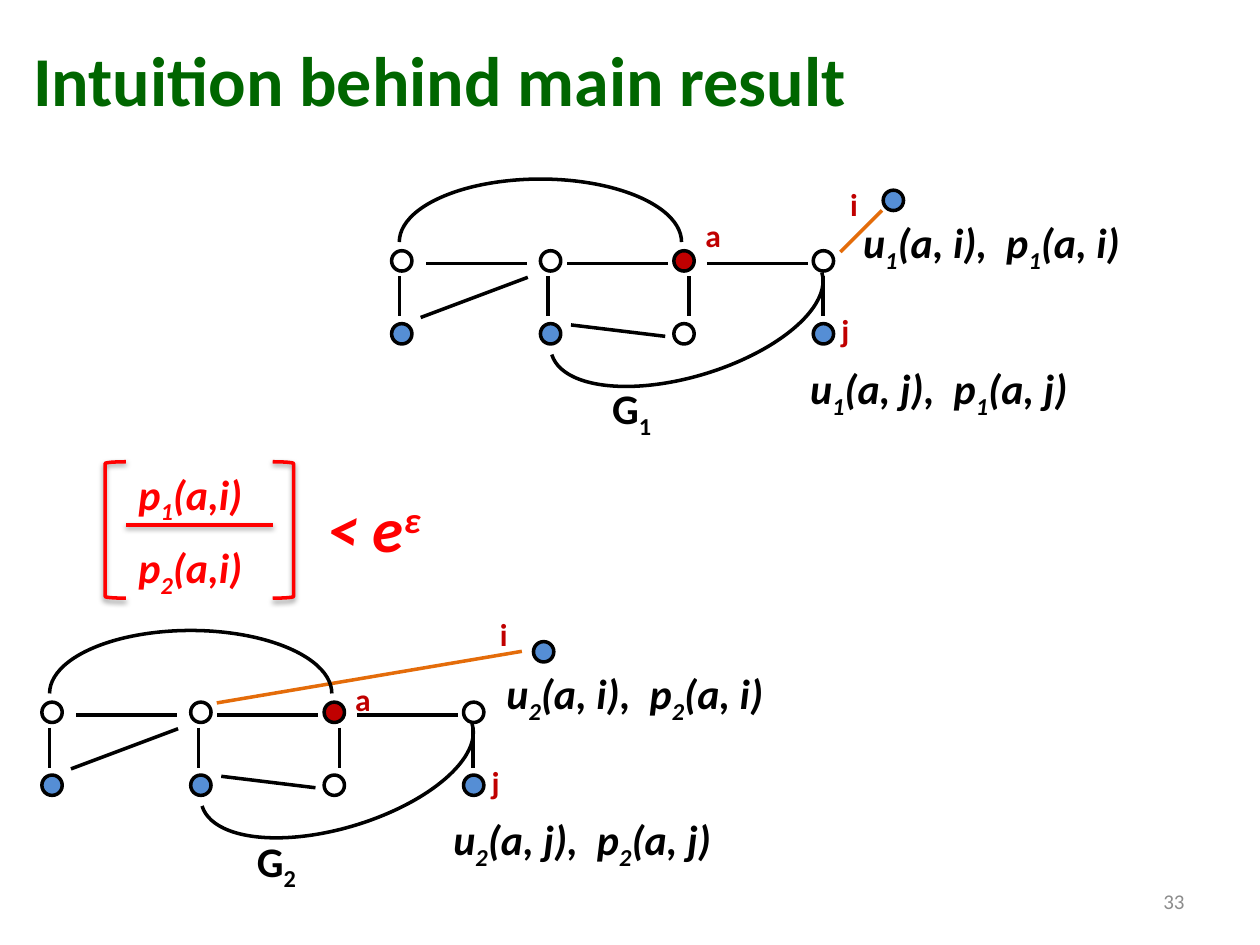
import lxml.etree
import pptx
import pptx.dml.color
import pptx.enum.shapes
import pptx.enum.text
import pptx.oxml.ns
import pptx.util
from dataclasses import dataclass

Cm, Pt = pptx.util.Cm, pptx.util.Pt
Kind = pptx.enum.shapes.MSO_SHAPE
Align = pptx.enum.text.PP_ALIGN
qn = pptx.oxml.ns.qn


@dataclass(frozen=True)
class Theme:
    font: str = "Calibri"
    green: str = "006600"
    black: str = "000000"
    grey: str = "8C8C8C"
    blue: str = "558ED5"
    dark: str = "C00000"
    red: str = "FF0000"
    orange: str = "E46C0A"
    title: int = 40
    big: int = 36
    body: int = 24
    label: int = 18
    small: int = 12
    stroke: int = 2


theme = Theme()

# Graph layout in cm, shared by both graphs
COLS = (8.1, 11.1, 13.79, 16.6)
ROWS = (5.26, 6.73)
DOT = 0.41
FILLS = ((None, None, theme.dark, None),
         (theme.blue, theme.blue, None, theme.blue))
EDGES = (
    [(x, 5.57, x, 6.38) for x in (8.05, 11.05, 13.89, 16.59)]
    + [(x, 5.31, x + 2.03, 5.31) for x in (8.59, 11.43, 14.25)]
    + [(8.48, 6.4, 10.64, 5.59), (11.51, 6.55, 13.41, 6.78)]
)
ARCS = ((8.05, 3.61, 0), (11, 5.05, 163.1))

# What differs between the graphs
GRAPHS = (
    {"num": 1, "shift": (0, 0), "edge": (16.94, 5.08, 17.78, 4.24),
     "a": (13.97, 4.24), "i": (16.89, 3.61), "name": (12.09, 7.59),
     "notes": {"i": (17.15, 4.24), "j": (16.08, 7.19)}},
    {"num": 2, "shift": (-7.05, 9.1), "edge": (4.37, 14.17, 10.52, 13.13),
     "a": (6.91, 13.59), "i": (9.83, 12.27), "name": (4.93, 16.71),
     "notes": {"i": (9.96, 13.34), "j": (8.89, 16.28)}},
)


def rgb(code):
    return pptx.dml.color.RGBColor.from_string(code)


def pen(shape, color):
    shape.line.color.rgb = rgb(color)
    shape.line.width = Pt(theme.stroke)


def shade(shape, drop=False):
    """Replace the theme shadow by none, or by a soft drop shadow."""
    box = lxml.etree.SubElement(shape._element.spPr, qn("a:effectLst"))
    if drop:
        cast = lxml.etree.SubElement(
            box, qn("a:outerShdw"), blurRad=str(Pt(3.1)), dist=str(Pt(1.6)),
            dir="5400000", rotWithShape="0")
        tint = lxml.etree.SubElement(cast, qn("a:srgbClr"), val=theme.black)
        lxml.etree.SubElement(tint, qn("a:alpha"), val="38000")


def line(shapes, ends, color=theme.black, drop=False):
    link = shapes.add_connector(
        pptx.enum.shapes.MSO_CONNECTOR.STRAIGHT, *map(Cm, ends))
    pen(link, color)
    shade(link, drop)


def form(shapes, kind, box, color=theme.black, fill=None, drop=False):
    shape = shapes.add_shape(kind, *map(Cm, box))
    if fill:
        shape.fill.solid()
        shape.fill.fore_color.rgb = rgb(fill)
    else:
        shape.fill.background()
    pen(shape, color)
    shade(shape, drop)
    return shape


def node(shapes, x, y, fill=None):
    form(shapes, Kind.OVAL, (x - DOT / 2, y - DOT / 2, DOT, DOT), fill=fill)


def text(shapes, box, words, size, color, wrap=True, grow=True,
         shift=-25, align=Align.LEFT, **style):
    """Write words; every second part between bars is shifted up or down."""
    frame = shapes.add_textbox(*map(Cm, box)).text_frame
    frame.word_wrap = wrap
    if grow:
        frame.auto_size = pptx.enum.text.MSO_AUTO_SIZE.SHAPE_TO_FIT_TEXT
    else:
        frame.vertical_anchor = pptx.enum.text.MSO_ANCHOR.MIDDLE
    para = frame.paragraphs[0]
    para.alignment = align
    look = {"name": theme.font, "size": Pt(size), "bold": True} | style
    for k, part in enumerate(words.split("|")):
        run = para.add_run()
        run.text = part
        for key, value in look.items():
            setattr(run.font, key, value)
        run.font.color.rgb = rgb(color)
        if k % 2:
            run._r.get_or_add_rPr().set("baseline", str(shift * 1000))


def graph(slide, data):
    shapes = slide.shapes.add_group_shape().shapes
    dx, dy = data["shift"]
    num = data["num"]

    # Edges and arcs
    for x1, y1, x2, y2 in EDGES:
        line(shapes, (x1 + dx, y1 + dy, x2 + dx, y2 + dy))
    line(shapes, data["edge"], theme.orange)
    for x, y, turn in ARCS:
        arc = form(shapes, Kind.ARC, (x + dx, y + dy, 5.69, 2.54))
        arc.adjustments[0] = 108  # 180 degrees, in 1/60000 over 100000
        arc.adjustments[1] = 0
        arc.rotation = turn

    # Nodes
    for y, fills in zip(ROWS, FILLS):
        for x, fill in zip(COLS, fills):
            node(shapes, x + dx, y + dy, fill)
    node(shapes, 18.01 + dx, 4.04 + dy, theme.blue)

    # Node labels and graph name
    for word, spot, width in (("a", data["a"], 0.84), ("i", data["i"], 0.66),
                              ("j", (16.71 + dx, 6.15 + dy), 0.69)):
        text(shapes, (*spot, width, 1.02), word, theme.label, theme.dark,
             wrap=False)
    text(shapes, (*data["name"], 1.35, 1.27), f"G|{num}", theme.body,
         theme.black, wrap=False)

    # Utility and probability
    for end, spot in data["notes"].items():
        text(slide.shapes, (*spot, 6.35, 1.27),
             f"u|{num}|(a, {end}),  p|{num}|(a, {end})",
             theme.body, theme.black, italic=True)


def ratio(slide):
    shapes = slide.shapes.add_group_shape().shapes
    for num, y in ((1, 9.31), (2, 10.8)):
        text(shapes, (2.54, y, 2.96, 1.27), f"p|{num}|(a,i)",
             theme.body, theme.red, italic=True)
    line(shapes, (2.54, 10.58, 5.5, 10.58), theme.red, drop=True)
    for x, flip in ((2.12, "0"), (5.5, "1")):
        side = form(shapes, Kind.LEFT_BRACKET, (x, 9.31, 0.42, 2.75),
                    theme.red, drop=True)
        side._element.spPr.xfrm.set("flipH", flip)
    text(shapes, (6.35, 9.74, 2.54, 1.8), "< e|ε", theme.big, theme.red,
         shift=30, italic=True)


def main():
    deck = pptx.Presentation()
    deck.slide_width, deck.slide_height = Cm(25.4), Cm(19.05)
    slide = deck.slides.add_slide(deck.slide_layouts[6])

    # Title and slide number
    text(slide.shapes, (0.42, 0, 24.34, 3.18), "Intuition behind main result",
         theme.title, theme.green, grow=False)
    text(slide.shapes, (18.2, 17.66, 5.93, 1.01), "33", theme.small,
         theme.grey, grow=False, align=Align.RIGHT, bold=False)

    for data in GRAPHS:
        graph(slide, data)
    ratio(slide)
    deck.save("out.pptx")


if __name__ == "__main__":
    main()
